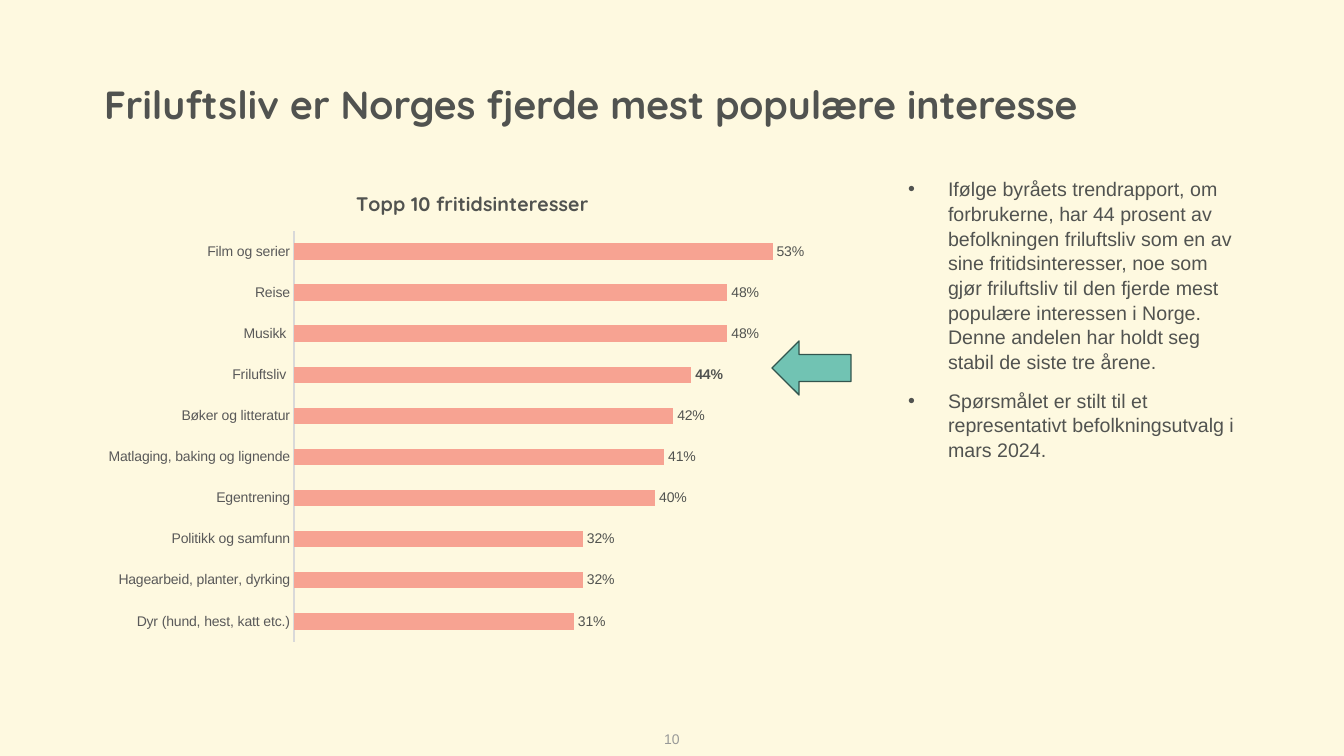
"""Build a slide with a bar chart of the ten most popular leisure interests in Norway."""
from lxml.etree import SubElement
from pptx import Presentation
from pptx.chart.data import CategoryChartData
from pptx.dml.color import RGBColor
from pptx.enum.chart import XL_CHART_TYPE as CHART, XL_LABEL_POSITION as LABEL, XL_TICK_MARK as TICK
from pptx.enum.shapes import MSO_SHAPE as SHAPE
from pptx.enum.text import MSO_ANCHOR as ANCHOR, MSO_AUTO_SIZE as AUTO, PP_ALIGN as ALIGN
from pptx.oxml import parse_xml
from pptx.oxml.ns import nsdecls, qn
from pptx.util import Pt

PX = 12192000 / 1344
INK = "515350"


def style(font, size, color=INK, name="Arial", bold=False):
    font.size, font.name, font.bold = Pt(size), name, bold
    font.color.rgb = RGBColor.from_string(color)


def write(sp, box, texts, anchor=ANCHOR.TOP, align=ALIGN.LEFT, spacing=1.0, gap=0, bullet=False, **font):
    sp.left, sp.top, sp.width, sp.height = [round(v * PX) for v in box]
    tf = sp.text_frame
    tf.word_wrap, tf.auto_size, tf.vertical_anchor = True, AUTO.NONE, anchor
    for i, text in enumerate(texts):
        p = tf.paragraphs[0] if i == 0 else tf.add_paragraph()
        p.alignment, p.line_spacing = align, spacing
        p.space_before, p.space_after = Pt(gap if i else 0), Pt(0)
        if bullet:
            pPr = p._p.get_or_add_pPr()
            pPr.set("marL", str(round(40 * PX)))
            pPr.set("indent", str(round(-40 * PX)))
            SubElement(pPr, qn("a:buFont"), typeface="Arial")
            SubElement(pPr, qn("a:buChar"), char="•")
        r = p.add_run()
        r.text = text
        style(r.font, **font)


prs = Presentation()
prs.slide_width, prs.slide_height = round(1344 * PX), round(756 * PX)
s = prs.slides.add_slide(prs.slide_layouts[1])
s.background.fill.solid()
s.background.fill.fore_color.rgb = RGBColor.from_string("FEF9E0")

write(s.shapes.title, (94, 40, 1161, 93), ["Friluftsliv er Norges fjerde mest populære interesse"],
      anchor=ANCHOR.BOTTOM, spacing=0.9, size=28, name="Quicksand", bold=True)
write(s.placeholders[1], (898, 171, 357, 482), [
    "Ifølge byråets trendrapport, om forbrukerne, har 44 prosent av befolkningen friluftsliv "
    "som en av sine fritidsinteresser, noe som gjør friluftsliv til den fjerde mest populære "
    "interessen i Norge. Denne andelen har holdt seg stabil de siste tre årene.",
    "Spørsmålet er stilt til et representativt befolkningsutvalg i mars 2024.",
], spacing=1.05, gap=10, bullet=True, size=14)
write(s.shapes.add_textbox(0, 0, 0, 0), (634, 721, 76, 35), ["10"],
      anchor=ANCHOR.MIDDLE, align=ALIGN.CENTER, size=10, color="989998")

interests = {
    "Film og serier": 0.53,
    "Reise": 0.48,
    "Musikk ": 0.48,
    "Friluftsliv ": 0.44,
    "Bøker og litteratur": 0.42,
    "Matlaging, baking og lignende": 0.41,
    "Egentrening": 0.40,
    "Politikk og samfunn": 0.32,
    "Hagearbeid, planter, dyrking": 0.32,
    "Dyr (hund, hest, katt etc.)": 0.31,
}
data = CategoryChartData(number_format="0%")
data.categories = list(interests)
data.add_series("Series 1", interests.values())
box = [round(v * PX) for v in (94, 171, 757, 480)]
chart = s.shapes.add_chart(CHART.BAR_CLUSTERED, *box, data).chart
style(chart.font, 10)
chart.has_legend = False
chart.has_title = True
title = chart.chart_title
title.include_in_layout = False
r = title.text_frame.paragraphs[0].add_run()
r.text = "Topp 10 fritidsinteresser"
style(r.font, 14, name="Quicksand", bold=True)

plot = chart.plots[0]
plot.gap_width = 150
plot.vary_by_categories = False
bars = plot.series[0]
bars.format.fill.solid()
bars.format.fill.fore_color.rgb = RGBColor.from_string("F7A392")
labels = bars.data_labels
labels.show_value = True
labels.number_format, labels.number_format_is_linked = "0%", False
labels.position = LABEL.OUTSIDE_END
style(labels.font, 10)
highlight = bars.points[3].data_label
style(highlight.font, 10, bold=True)
highlight.position = LABEL.OUTSIDE_END

cats, vals = chart.category_axis, chart.value_axis
cats.reverse_order = True
cats.major_tick_mark = cats.minor_tick_mark = TICK.NONE
style(cats.tick_labels.font, 10, "595959")
cats.format.line.color.rgb = RGBColor.from_string("D9D9D9")
cats.format.line.width = Pt(0.75)
vals.visible = vals.has_major_gridlines = False
vals.minimum_scale, vals.maximum_scale = 0, 0.6

area = chart._chartSpace.chart.plotArea
for old in area.findall(qn("c:layout")):
    area.remove(old)
area.insert(0, parse_xml(
    f'<c:layout {nsdecls("c")}><c:manualLayout><c:layoutTarget val="inner"/>'
    '<c:xMode val="edge"/><c:yMode val="edge"/>'
    f'<c:x val="{200 / 757:.4f}"/><c:y val="{60 / 480:.4f}"/>'
    f'<c:w val="{542 / 757:.4f}"/><c:h val="{411 / 480:.4f}"/></c:manualLayout></c:layout>'))

arrow = s.shapes.add_shape(SHAPE.RIGHT_ARROW, *[round(v * PX) for v in (772, 341, 79, 54)])
arrow.rotation = 180
arrow.shadow.inherit = False
arrow.fill.solid()
arrow.fill.fore_color.rgb = RGBColor.from_string("71C3B3")
arrow.line.color.rgb = RGBColor.from_string("32554E")
arrow.line.width = Pt(1)

prs.save("out.pptx")
